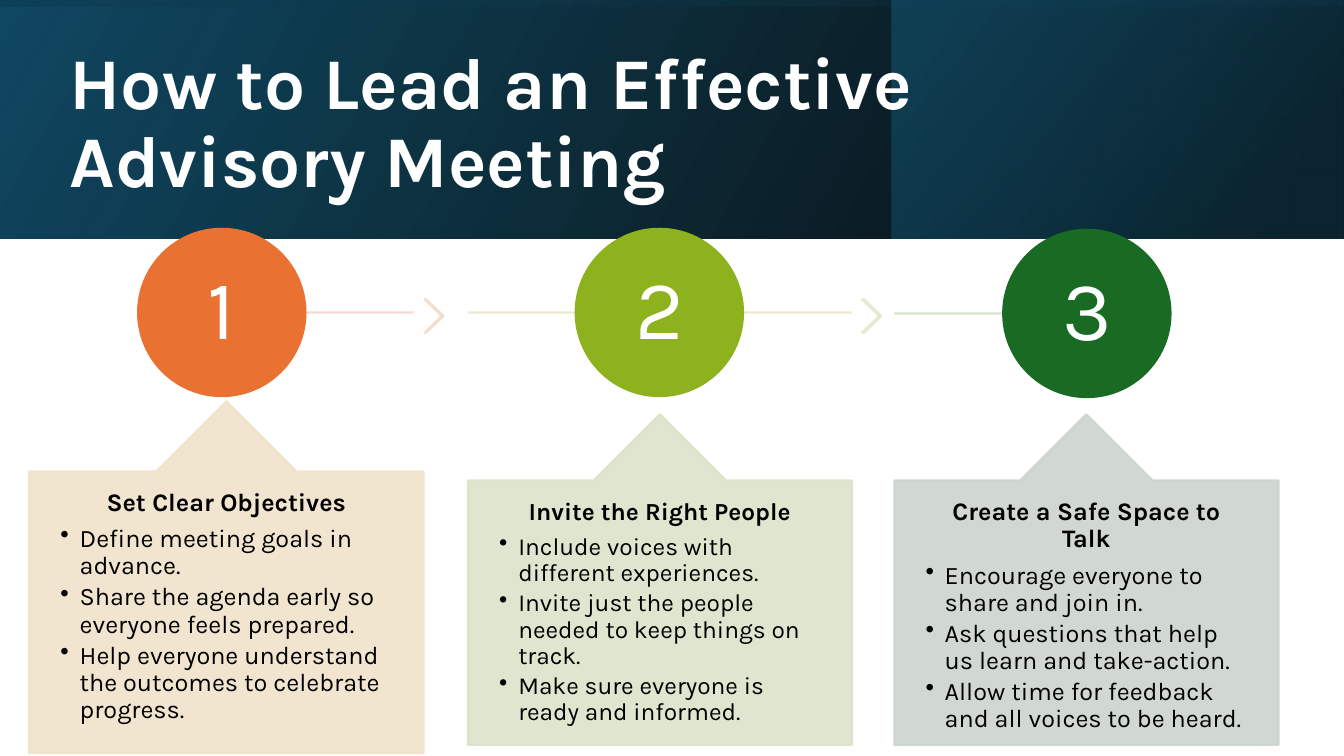
"""Build the slide on leading an effective advisory meeting in three steps."""
from dataclasses import dataclass
from typing import Optional

from lxml import etree
from pptx import Presentation
from pptx.dml.color import RGBColor
from pptx.enum.shapes import MSO_CONNECTOR, MSO_SHAPE
from pptx.enum.text import MSO_ANCHOR, MSO_AUTO_SIZE, PP_ALIGN
from pptx.oxml.ns import qn
from pptx.util import Emu, Pt

RECTANGLE = MSO_SHAPE.RECTANGLE
OVAL = MSO_SHAPE.OVAL
CHEVRON = MSO_SHAPE.CHEVRON
CALLOUT = MSO_SHAPE.UP_ARROW_CALLOUT
STRAIGHT = MSO_CONNECTOR.STRAIGHT
MIDDLE, TOP = MSO_ANCHOR.MIDDLE, MSO_ANCHOR.TOP
CENTER, LEFT = PP_ALIGN.CENTER, PP_ALIGN.LEFT
NO_AUTOFIT = MSO_AUTO_SIZE.NONE

PX = 9144
FONT = "Karla"
WHITE, BLACK = "FFFFFF", "000000"
DIAMETER = 166
NUMBER_INSET = 24
BULLET_INDENT = 19
HEAD_RATIO = 0.2
TITLE_ONLY = 5


@dataclass
class Band:
    """One gradient layer of the header; stops are position, colour, opacity."""
    box: tuple[int, int, int, int]
    rotation: int
    angle: int
    stops: list[tuple[int, str, int]]


@dataclass
class Step:
    """One numbered step with its timeline piece and callout."""
    circle: tuple[int, int]
    circle_color: str
    track: tuple[int, int]
    track_color: str
    chevron_color: Optional[str]
    card: tuple[int, int, int, int]
    card_color: str
    text_size: float
    heading: str
    points: list[str]


BANDS = [
    Band((0, 0, 1333, 237), 0, 330, [(0, BLACK, 96), (100, "104862", 100)]),
    Band((884, 0, 448, 237), 0, 320, [(19, "0B3041", 68), (100, "156082", 48)]),
    Band((548, -548, 237, 1333), 270, 350, [(23, "104862", 16), (99, BLACK, 45)]),
]

STEPS = [
    Step((137, 227), "E97132", (241, 410), "F7D5CE", "F3DDCC",
         (29, 398, 391, 349), "F0E3CB", 18, "Set Clear Objectives",
         ["Define meeting goals in advance.",
          "Share the agenda early so everyone feels prepared.",
          "Help everyone understand the outcomes to celebrate progress."]),
    Step((571, 227), "8EB21E", (464, 845), "ECE8CA", "E5E8CA",
         (464, 411, 381, 328), "DBE4CA", 17.5, "Invite the Right People",
         ["Include voices with different experiences.",
          "Invite just the people needed to keep things on track.",
          "Make sure everyone is ready and informed."]),
    Step((995, 228), "196B24", (887, 1078), "D3DFCA", None,
         (887, 411, 381, 328), "CCD4CD", 18, "Create a Safe Space to Talk",
         ["Encourage everyone to share and join in.",
          "Ask questions that help us learn and take-action.",
          "Allow time for feedback and all voices to be heard."]),
]


def px(length: int) -> Emu:
    """Turn px into EMU."""
    return Emu(length * PX)


def rgb(color: str) -> RGBColor:
    """Turn a hex string into a colour."""
    return RGBColor.from_string(color)


def set_opacity(shape, percent: int) -> None:
    """Make every solid colour of a shape translucent."""
    for color in shape.element.iter(qn("a:srgbClr")):
        etree.SubElement(color, qn("a:alpha"), val=str(percent * 1000))


def draw_shape(slide, kind, box: tuple, color: str, opacity: int = 100,
               adjustments: tuple = ()) -> None:
    """Draw a preset shape with matching fill and outline."""
    shape = slide.shapes.add_shape(kind, *map(px, box))
    shape.shadow.inherit = False
    for index, value in enumerate(adjustments):
        shape.adjustments[index] = value
    shape.fill.solid()
    shape.fill.fore_color.rgb = rgb(color)
    shape.line.color.rgb = rgb(color)
    shape.line.width = Pt(1.5)
    if opacity < 100:
        set_opacity(shape, opacity)


def draw_band(slide, band: Band) -> None:
    """Draw a mirrored header layer with its gradient."""
    layer = slide.shapes.add_shape(RECTANGLE, *map(px, band.box))
    layer.shadow.inherit = False
    layer.line.fill.background()
    layer.rotation = band.rotation
    properties = layer.element.spPr
    properties.find(qn("a:xfrm")).set("flipH", "1")
    gradient = etree.Element(qn("a:gradFill"), rotWithShape="1")
    stops = etree.SubElement(gradient, qn("a:gsLst"))
    for position, color, opacity in band.stops:
        stop = etree.SubElement(stops, qn("a:gs"), pos=str(position * 1000))
        tint = etree.SubElement(stop, qn("a:srgbClr"), val=color)
        etree.SubElement(tint, qn("a:alpha"), val=str(opacity * 1000))
    etree.SubElement(gradient, qn("a:lin"), ang=str(band.angle * 60000), scaled="0")
    properties.find(qn("a:prstGeom")).addnext(gradient)


def draw_track(slide, start: int, end: int, y: int, color: str) -> None:
    """Draw a horizontal timeline piece."""
    track = slide.shapes.add_connector(STRAIGHT, px(start), px(y), px(end), px(y))
    track.line.color.rgb = rgb(color)
    track.line.width = Pt(1.5)
    set_opacity(track, 90)
    etree.SubElement(track.element.spPr, qn("a:effectLst"))


def add_text_frame(slide, box: tuple, anchor, insets: tuple[int, int]):
    """Add a wrapping text box and return its frame."""
    frame = slide.shapes.add_textbox(*map(px, box)).text_frame
    frame.word_wrap = True
    frame.auto_size = NO_AUTOFIT
    frame.vertical_anchor = anchor
    frame.margin_left = frame.margin_right = px(insets[0])
    frame.margin_top = frame.margin_bottom = px(insets[1])
    return frame


def write(paragraph, text: str, size: float, color: str, bold: bool = False,
          align=CENTER, gap: float = 0, bullet: bool = False) -> None:
    """Fill and format a paragraph; gap is the space after as a share of size."""
    paragraph.text = text
    paragraph.alignment = align
    paragraph.line_spacing = 0.9
    paragraph.space_after = Pt(size * gap)
    if bullet:
        properties = paragraph._p.get_or_add_pPr()
        properties.set("marL", str(px(BULLET_INDENT)))
        properties.set("indent", str(px(-BULLET_INDENT)))
        etree.SubElement(properties, qn("a:buChar"), char="•")
    font = paragraph.font
    font.name, font.size, font.bold = FONT, Pt(size), bold
    font.color.rgb = rgb(color)


def draw_title(slide) -> None:
    """Place and format the title above the header layers."""
    title = slide.shapes.title
    title.left, title.top, title.width, title.height = map(px, (59, 38, 1155, 172))
    title.text_frame.auto_size = NO_AUTOFIT
    title.text_frame.vertical_anchor = MIDDLE
    write(title.text_frame.paragraphs[0], "How to Lead an Effective Advisory Meeting",
          52, WHITE, bold=True, align=LEFT)
    title.element.getparent().append(title.element)


def draw_step(slide, number: int, step: Step) -> None:
    """Draw one step: timeline, numbered circle and callout."""
    x, y = step.circle
    draw_track(slide, *step.track, y + DIAMETER // 2, step.track_color)
    if step.chevron_color:
        draw_shape(slide, CHEVRON, (x + 284, y + 70, 19, 33), step.chevron_color, 90, (0.9,))
    draw_shape(slide, OVAL, (x, y, DIAMETER, DIAMETER), step.circle_color)
    side = DIAMETER - 2 * NUMBER_INSET
    numeral = add_text_frame(slide, (x + NUMBER_INSET, y + NUMBER_INSET, side, side),
                             MIDDLE, (6, 6))
    write(numeral.paragraphs[0], str(number), 60, WHITE)

    draw_shape(slide, CALLOUT, step.card, step.card_color, 90, (0.5, HEAD_RATIO, HEAD_RATIO, 1))
    left, top, width, height = step.card
    head = round(height * HEAD_RATIO)
    advice = add_text_frame(slide, (left, top + head, width, height - head), TOP, (31, 18))
    write(advice.paragraphs[0], step.heading, step.text_size, BLACK, bold=True, gap=0.35)
    for point in step.points:
        write(advice.add_paragraph(), point, step.text_size, BLACK,
              align=LEFT, gap=0.15, bullet=True)


def main() -> None:
    """Build and save the slide."""
    deck = Presentation()
    deck.slide_width, deck.slide_height = px(1333), px(750)
    slide = deck.slides.add_slide(deck.slide_layouts[TITLE_ONLY])
    for band in BANDS:
        draw_band(slide, band)
    draw_title(slide)
    for number, step in enumerate(STEPS, 1):
        draw_step(slide, number, step)
    deck.save("out.pptx")


if __name__ == "__main__":
    main()
